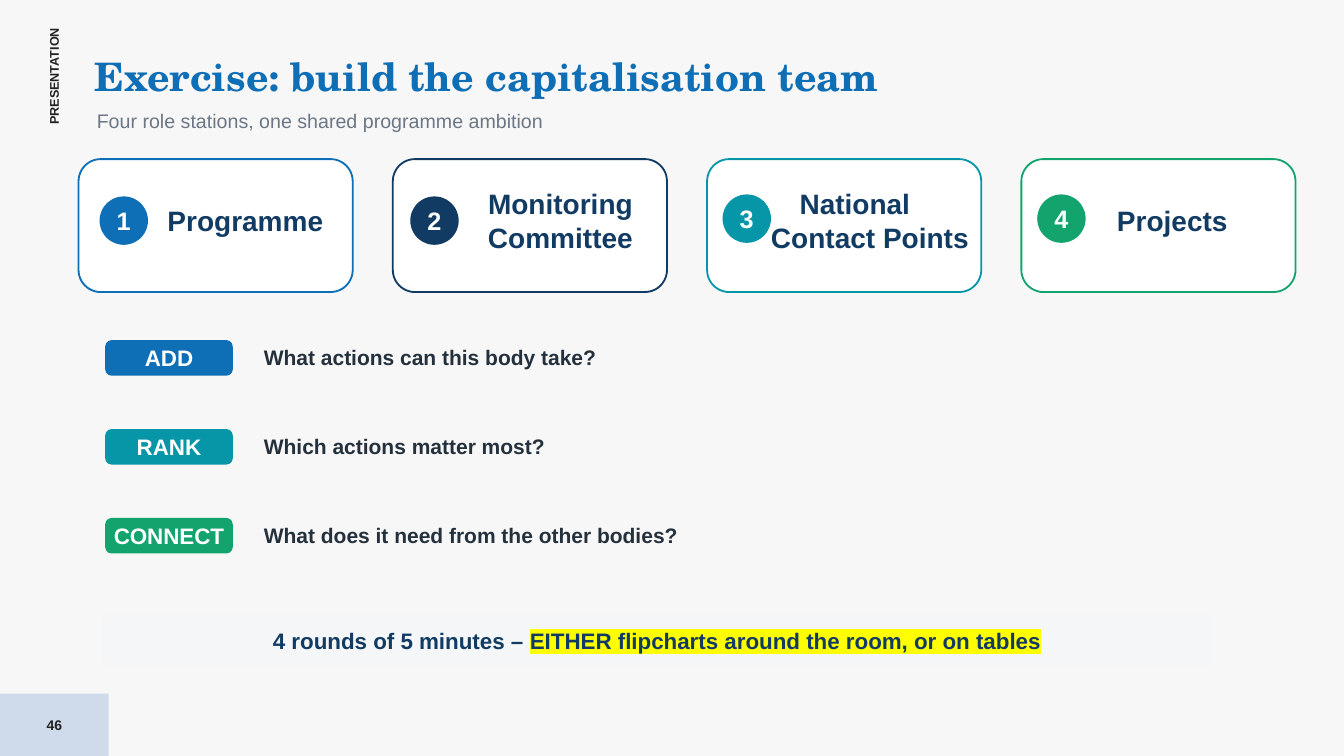
"""Build the team exercise slide."""
from lxml import etree
from pptx import Presentation
from pptx import util as u
from pptx.dml.color import RGBColor
from pptx.enum import shapes, text
from pptx.oxml import ns

rgb = RGBColor.from_string
cm = u.Cm
ROUND = shapes.MSO_SHAPE.ROUNDED_RECTANGLE
BLUE, NAVY, TEAL, GREEN = "0E6EB6", "123B63", "0796A8", "13A36D"
WHITE, DARK, GREY, PALE = "FFFFFF", "222222", "6B7785", "F4F6F8"

deck = Presentation()
deck.slide_width, deck.slide_height = cm(33.87), cm(19.05)
slide = deck.slides.add_slide(deck.slide_layouts[6])
slide.background.fill.solid()
slide.background.fill.fore_color.rgb = rgb("F7F7F7")


def put(words, x, y, w, h, kind=None, fill=None, line=None, width=1,
        size=16, ink=NAVY, bold=True, face="Arial", mid=True, left=False,
        first=0, wrap=True, mark=""):
    box = (cm(x), cm(y), cm(w), cm(h))
    if kind is None:
        item = slide.shapes.add_textbox(*box)
    else:
        item = slide.shapes.add_shape(kind, *box)
        item.shadow.inherit = False
        item.fill.solid()
        item.fill.fore_color.rgb = rgb(fill)
        if line:
            item.line.color.rgb = rgb(line)
            item.line.width = u.Pt(width)
        else:
            item.line.fill.background()
    frame = item.text_frame
    frame.word_wrap = wrap
    frame.margin_left = frame.margin_right = 0
    frame.margin_top = frame.margin_bottom = 0
    frame.vertical_anchor = text.MSO_ANCHOR.MIDDLE if mid else text.MSO_ANCHOR.TOP
    para = frame.paragraphs[0]
    para.alignment = text.PP_ALIGN.LEFT if left else text.PP_ALIGN.CENTER
    if first:
        para._p.get_or_add_pPr().set("indent", str(cm(first)))
    for part in filter(None, (words, mark)):
        run = para.add_run()
        run.text = part
        font = run.font
        font.size, font.bold, font.name = u.Pt(size), bold, face
        font.color.rgb = rgb(ink)
        if part == mark:
            glow = etree.Element(ns.qn("a:highlight"))
            etree.SubElement(glow, ns.qn("a:srgbClr"), val="FFFF00")
            font._element.find(ns.qn("a:solidFill")).addnext(glow)
    return item


put("46", 0, 17.48, 2.74, 1.57, shapes.MSO_SHAPE.RECTANGLE, "CFDBEA",
    size=10, ink=DARK)
side = put("PRESENTATION", 0.1, 1.7, 2.51, 0.38, size=9, ink=DARK,
           mid=False, left=True, wrap=False)
side.rotation = 270
put("Exercise: build the capitalisation team", 2.39, 1.32, 29.72, 1.19,
    size=28, ink=BLUE, face="TeX Gyre Schola", mid=False, left=True)
put("Four role stations, one shared programme ambition", 2.44, 2.74, 29.21, 0.61,
    size=14, ink=GREY, bold=False, mid=False, left=True)

roles = [
    ("Programme", BLUE, 2.51, 4.95, 3.1, 6.17, 0),
    ("Monitoring Committee", NAVY, 10.34, 4.95, 11.94, 4.37, 0),
    ("National Contact Points", TEAL, 18.21, 4.9, 19.43, 5.05, 0.72),
    ("Projects", GREEN, 26.14, 4.9, 27.36, 4.37, 0),
]
for i, (role, tint, dot, top, x, w, first) in enumerate(roles):
    put("", 1.98 + 7.92 * i, 4.01, 6.91, 3.35, ROUND, WHITE, tint, 1.3)
    put(str(i + 1), dot, top, 1.22, 1.22, shapes.MSO_SHAPE.OVAL, tint,
        size=18, ink=WHITE)
    put(role, x, 4.7, w, 1.7, size=20, first=first, left=first > 0)

steps = [
    ("ADD", BLUE, "What actions can this body take?"),
    ("RANK", TEAL, "Which actions matter most?"),
    ("CONNECT", GREEN, "What does it need from the other bodies?"),
]
for i, (verb, tint, ask) in enumerate(steps):
    y = 8.59 + 2.24 * i
    put(verb, 2.67, y, 3.18, 0.86, ROUND, tint, tint, ink=WHITE)
    put(ask, 6.65, y + 0.1, 22.35, 0.64, size=15, ink="24313D",
        mid=False, left=True)

put("4 rounds of 5 minutes – ", 2.59, 15.44, 27.94, 1.4, ROUND, PALE, PALE,
    mark="EITHER flipcharts around the room, or on tables")

deck.save("out.pptx")
